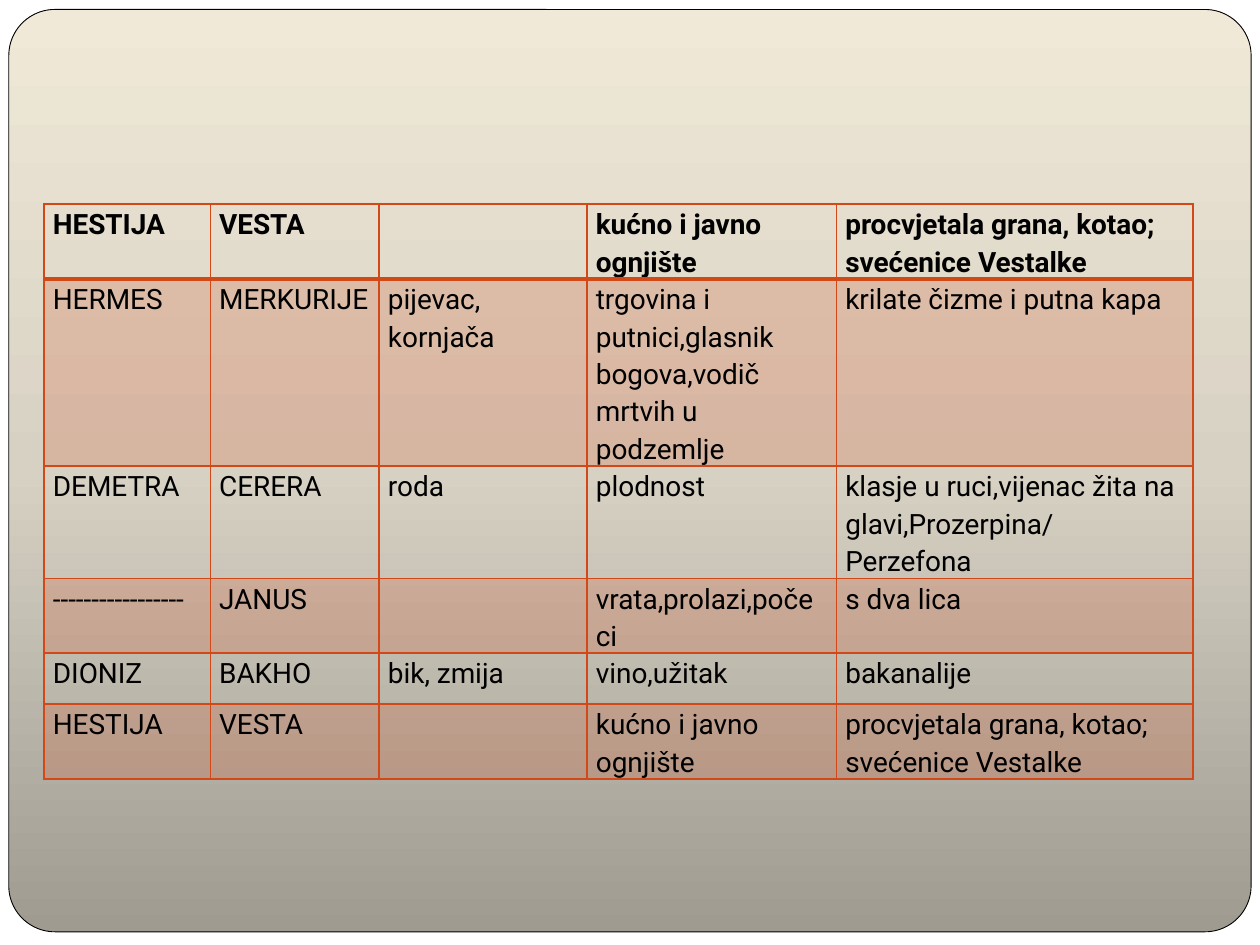
from copy import deepcopy

from lxml.etree import SubElement
from pptx import Presentation
from pptx.dml.color import RGBColor
from pptx.enum.shapes import MSO_SHAPE
from pptx.oxml.ns import qn
from pptx.util import Inches, Pt

WHITE = RGBColor(0xFF, 0xFF, 0xFF)
BLACK = RGBColor(0x00, 0x00, 0x00)
RUST = RGBColor(0xD3, 0x48, 0x17)
STONE = RGBColor(0x9F, 0x9B, 0x91)
SAND = RGBColor(0xD7, 0xD1, 0xC4)
CREAM = RGBColor(0xF0, 0xE9, 0xD8)

COLUMN_SHARES = [0.132, 0.134, 0.165, 0.198, 0.283]
GODS = [
    ["HESTIJA", "VESTA", "", "kućno i javno ognjište",
     "procvjetala grana, kotao; svećenice Vestalke"],
    ["HERMES", "MERKURIJE", "pijevac, kornjača",
     "trgovina i putnici,glasnik bogova,vodič mrtvih u podzemlje",
     "krilate čizme i putna kapa"],
    ["DEMETRA", "CERERA", "roda", "plodnost",
     "klasje u ruci,vijenac žita na glavi,Prozerpina/\nPerzefona"],
    ["-----------------", "JANUS", "", "vrata,prolazi,počeci", "s dva lica"],
    ["DIONIZ", "BAKHO", "bik, zmija", "vino,užitak", "bakanalije"],
    ["HESTIJA", "VESTA", "", "kućno i javno ognjište",
     "procvjetala grana, kotao; svećenice Vestalke"],
]


class Deck:
    font = {"name": "Roboto", "size": Pt(16)}
    margins = {"margin_left": Inches(0.07), "margin_right": Inches(0.07),
               "margin_top": 0, "margin_bottom": 0}
    gradient = [STONE, SAND, CREAM]

    def __init__(self):
        self.show = Presentation()
        self.show.slide_width, self.show.slide_height = Inches(10), Inches(7.5)
        self.slide = self.show.slides.add_slide(self.show.slide_layouts[6])

    def box(self, left, top, width, height):
        across, down = self.show.slide_width, self.show.slide_height
        return (round(left * across), round(top * down),
                round(width * across), round(height * down))

    def shade(self, fill, owner):
        fill.gradient()
        fill.gradient_angle = 90
        stops = owner.find(".//" + qn("a:gsLst"))
        stops.insert(1, deepcopy(stops[0]))
        for number, (stop, color) in enumerate(zip(fill.gradient_stops, self.gradient)):
            stop.color.rgb = color
            stop.position = number / 2

    def background(self):
        self.shade(self.slide.background.fill, self.slide.element)

    def panel(self, preset, place, color=None, outline=None, corner=None):
        panel = self.slide.shapes.add_shape(preset, *self.box(*place))
        panel.shadow.inherit = False
        if corner:
            panel.adjustments[0] = corner
        if color:
            panel.fill.solid()
            panel.fill.fore_color.rgb = color
        else:
            self.shade(panel.fill, panel.element)
        if outline:
            panel.line.color.rgb = outline
            panel.line.width = Pt(0.5)
        else:
            panel.line.fill.background()

    def borders(self, cell, widths):
        properties = cell._tc.get_or_add_tcPr()
        for side, width in widths.items():
            line = SubElement(properties, qn(f"a:ln{side}"), w=str(Pt(width)))
            paint = SubElement(line, qn("a:solidFill"))
            SubElement(paint, qn("a:srgbClr"), val=str(RUST))

    def tint(self, cell, opacity):
        cell.fill.solid()
        cell.fill.fore_color.rgb = RUST
        color = cell._tc.tcPr.find(f"{qn('a:solidFill')}/{qn('a:srgbClr')}")
        SubElement(color, qn("a:alpha"), val=str(opacity * 1000))

    def label(self, cell, words, bold):
        for name, value in self.margins.items():
            setattr(cell, name, value)
        cell.text = words
        for paragraph in cell.text_frame.paragraphs:
            paragraph.line_spacing = 1.15
            for run in paragraph.runs:
                for name, value in {**self.font, "bold": bold}.items():
                    setattr(run.font, name, value)
                run.font.color.rgb = BLACK

    def table(self, rows, column_shares, left, top, row_share):
        place = self.box(left, top, sum(column_shares), row_share * len(rows))
        table = self.slide.shapes.add_table(len(rows), len(column_shares), *place).table
        for column, share in zip(table.columns, column_shares):
            column.width = round(share * self.show.slide_width)
        for r, row in enumerate(rows):
            for c, words in enumerate(row):
                cell = table.cell(r, c)
                self.borders(cell, {"L": 1, "R": 1, "T": 2 if r == 1 else 1,
                                    "B": 2 if r == 0 else 1})
                if r % 2:
                    self.tint(cell, 20)
                else:
                    cell.fill.background()
                if words:
                    self.label(cell, words, bold=r == 0)


def main():
    deck = Deck()
    deck.background()
    deck.panel(MSO_SHAPE.RECTANGLE, (0, 0, 1, 1), color=WHITE)
    deck.panel(MSO_SHAPE.ROUNDED_RECTANGLE, (0.007, 0.01, 0.986, 0.976),
               outline=BLACK, corner=0.05)
    deck.table(GODS, COLUMN_SHARES, left=0.035, top=0.216, row_share=0.054)
    deck.show.save("out.pptx")


if __name__ == "__main__":
    main()
